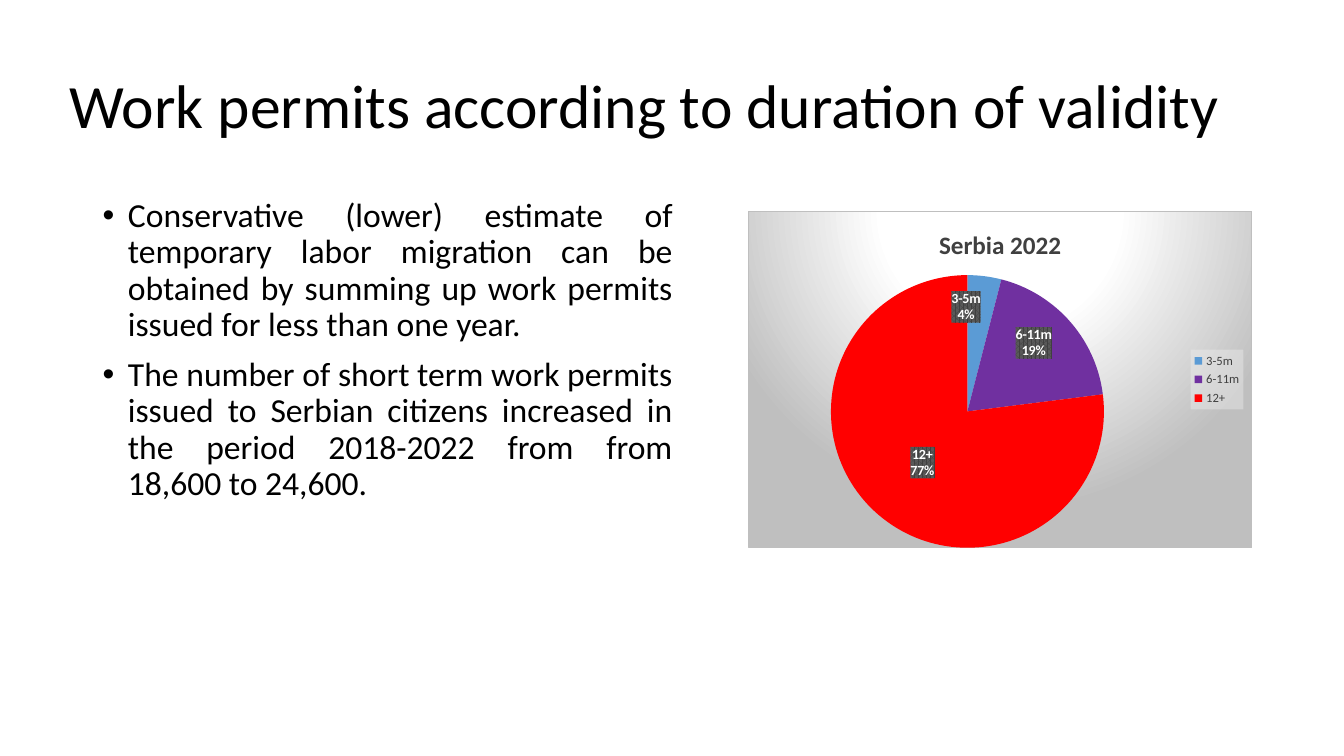
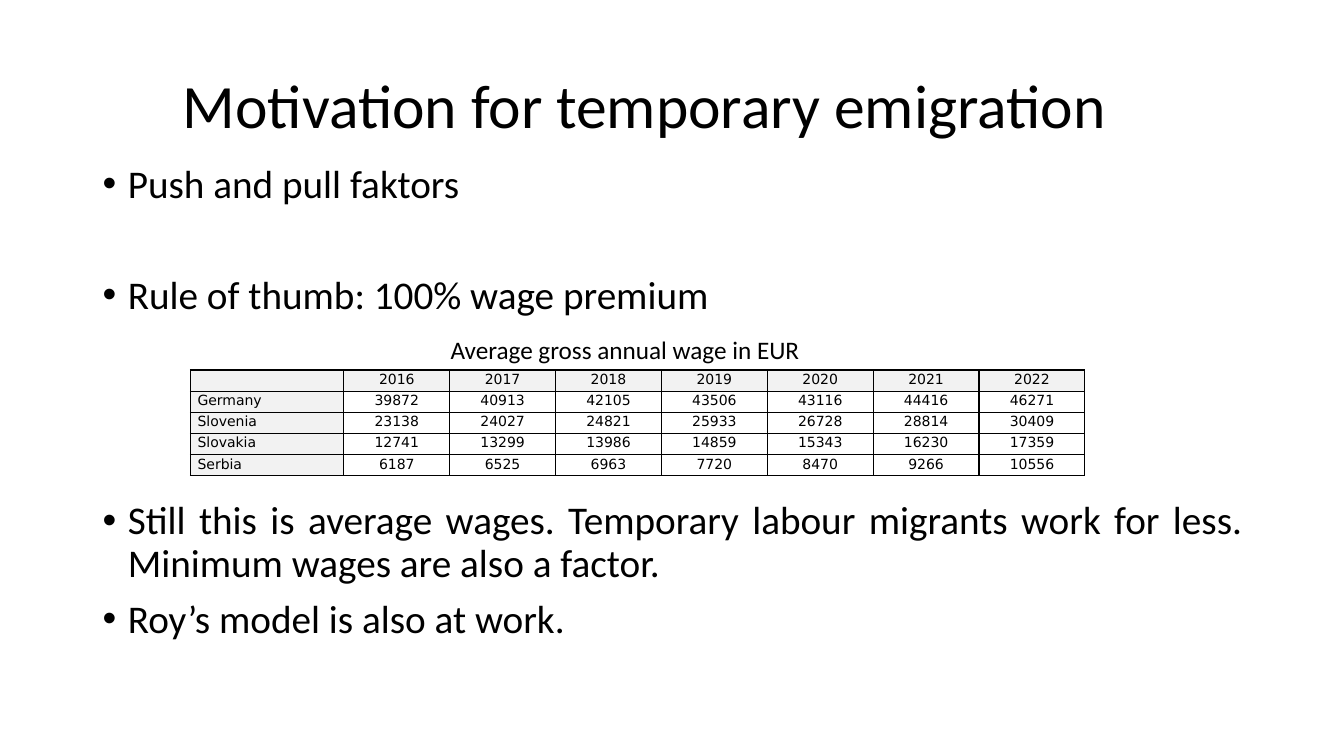
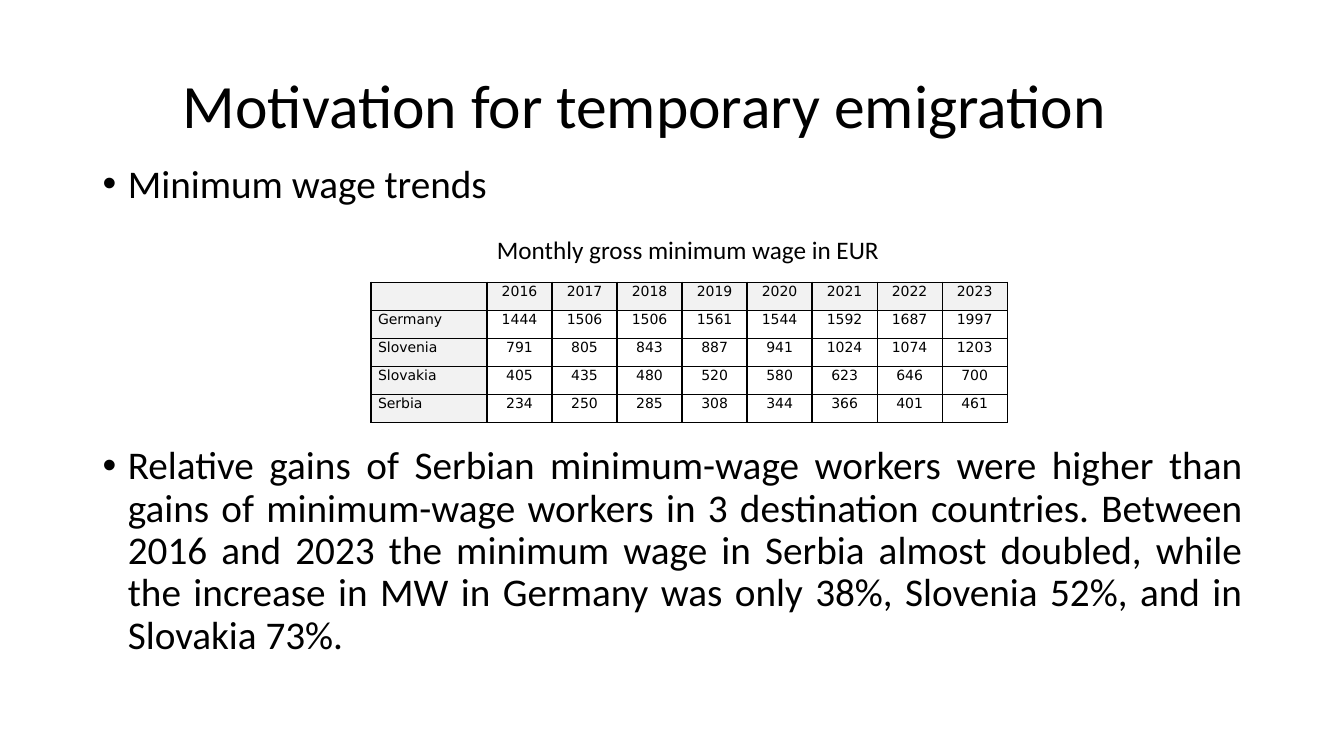
from copy import deepcopy
from dataclasses import dataclass
from lxml.etree import SubElement
from pptx import Presentation
from pptx.chart.data import CategoryChartData
from pptx.dml.color import RGBColor
from pptx.enum.chart import XL_CHART_TYPE, XL_LABEL_POSITION, XL_LEGEND_POSITION
from pptx.enum.text import MSO_ANCHOR, MSO_AUTO_SIZE, PP_ALIGN
from pptx.oxml import parse_xml
from pptx.oxml.ns import nsdecls, qn
from pptx.util import Inches, Pt


@dataclass(frozen=True)
class Theme:
    font: str = "Calibri"
    cell_font: str = "DejaVu Sans"
    ink: str = "000000"
    gray: str = "404040"
    mid: str = "595959"
    edge: str = "BFBFBF"
    pale: str = "F2F2F2"
    white: str = "FFFFFF"
    slices: tuple = ("5B9BD5", "7030A0", "FF0000")
    title: int = 44
    body: int = 28
    small: int = 24
    note: int = 18
    cell: int = 10
    key: int = 9


theme = Theme()


def put(item, color=None, **values):
    for name, value in values.items():
        setattr(item, name, value)
    if color:
        item.color.rgb = RGBColor.from_string(color)


def write(para, text, size, face=theme.font, **format):
    put(para, **format)
    if text:
        run = para.add_run()
        run.text = text
        put(run.font, theme.ink, name=face, size=Pt(size))
    else:
        SubElement(para._p, qn("a:endParaRPr"), sz=str(size * 100))


deck = Presentation()
put(deck, slide_width=Inches(13.33), slide_height=Inches(7.5))

pages = [
    ("Work permits according to duration of validity", (0.92, 1.92, 5.85, 5.5), theme.small, [
        (10, "Conservative (lower) estimate of temporary labor migration can be obtained by summing up work permits issued for less than one year."),
        (10, "The number of short term work permits issued to Serbian citizens increased in the period 2018-2022 from from 18,600 to 24,600."),
    ]),
    ("Motivation for temporary emigration", (0.92, 1.58, 11.5, 4.9), theme.body, [
        (10, "Push and pull faktors"),
        (49, "Rule of thumb: 100% wage premium"),
        (131, "Still this is average wages. Temporary labour migrants work for less. Minimum wages are also a factor."),
        (10, "Roy’s model is also at work."),
    ]),
    ("Motivation for temporary emigration", (0.92, 1.58, 11.5, 5.2), theme.body, [
        (10, "Minimum wage trends"),
        (171, "Relative gains of Serbian minimum-wage workers were higher than gains of minimum-wage workers in 3 destination countries. Between 2016 and 2023 the minimum wage in Serbia almost doubled, while the increase in MW in Germany was only 38%, Slovenia 52%, and in Slovakia 73%."),
    ]),
]

slides = []
for title, box, size, points in pages:
    slide = deck.slides.add_slide(deck.slide_layouts[5])
    slides.append(slide)
    head = slide.shapes.title
    put(head, left=Inches(0.37), top=Inches(0.35), width=Inches(12.05), height=Inches(1.45))
    put(head.text_frame, vertical_anchor=MSO_ANCHOR.MIDDLE, auto_size=MSO_AUTO_SIZE.NONE, word_wrap=True)
    write(head.text_frame.paragraphs[0], title, theme.title, alignment=PP_ALIGN.CENTER, line_spacing=0.9)

    frame = slide.shapes.add_textbox(*map(Inches, box)).text_frame
    frame.word_wrap = True
    for place, (gap, text) in enumerate(points):
        para = frame.add_paragraph() if place else frame.paragraphs[0]
        write(para, text, size, alignment=PP_ALIGN.JUSTIFY, line_spacing=0.9, space_before=Pt(gap))
        props = para._p.get_or_add_pPr()
        props.set("marL", str(Inches(0.25)))
        props.set("indent", str(Inches(-0.25)))
        SubElement(props, qn("a:buFont"), typeface="Arial")
        SubElement(props, qn("a:buChar"), char="•")

data = CategoryChartData()
data.categories = ["3-5m", "6-11m", "12+"]
data.add_series("Series 1", (4, 19, 77))
chart = slides[0].shapes.add_chart(
    XL_CHART_TYPE.PIE, Inches(7.42), Inches(2.09), Inches(5), Inches(3.35), data).chart
put(chart.font, theme.ink, name=theme.font, size=Pt(theme.cell))
put(chart, has_title=True, has_legend=True)
para = chart.chart_title.text_frame.paragraphs[0]
write(para, "Serbia 2022", theme.note)
put(para.runs[0].font, theme.gray, bold=True)
put(chart.legend, position=XL_LEGEND_POSITION.RIGHT, include_in_layout=False)
put(chart.legend.font, theme.gray, name=theme.font, size=Pt(theme.key))

plot = chart.plots[0]
plot.vary_by_categories = True
series = plot.series[0]
for place, color in enumerate(theme.slices):
    fill = series.points[place].format.fill
    fill.solid()
    fill.fore_color.rgb = RGBColor.from_string(color)
labels = series.data_labels
put(labels, show_value=False, show_percentage=True, show_category_name=True,
    position=XL_LABEL_POSITION.CENTER)
put(labels.font, theme.white, name=theme.font, size=Pt(theme.cell), bold=True)

root = chart.element
group = root.find(".//" + qn("c:dLbls"))
legend = root.find(".//" + qn("c:legend"))
area = root.find(".//" + qn("c:plotArea"))
fills = [
    (root, f'''<a:gradFill><a:gsLst>
        <a:gs pos="0"><a:srgbClr val="{theme.white}"/></a:gs>
        <a:gs pos="39000"><a:srgbClr val="{theme.white}"/></a:gs>
        <a:gs pos="100000"><a:srgbClr val="{theme.edge}"/></a:gs></a:gsLst>
        <a:path path="circle"><a:fillToRect l="50000" t="-80000" r="50000" b="180000"/></a:path>
        </a:gradFill><a:ln w="9525"><a:solidFill><a:srgbClr val="{theme.edge}"/></a:solidFill></a:ln>'''),
    (legend, f'''<a:solidFill><a:srgbClr val="{theme.pale}"><a:alpha val="39000"/></a:srgbClr></a:solidFill>'''),
    (group, f'''<a:pattFill prst="pct75"><a:fgClr><a:srgbClr val="{theme.gray}"/></a:fgClr>
        <a:bgClr><a:srgbClr val="{theme.mid}"/></a:bgClr></a:pattFill>'''),
]
for part, fill in fills:
    part.find(qn("c:txPr")).addprevious(parse_xml(f'<c:spPr {nsdecls("c", "a")}>{fill}</c:spPr>'))

split = parse_xml(f'<c:separator {nsdecls("c")}>\n</c:separator>')
group.find(qn("c:showBubbleSize")).addnext(split)
shared = [deepcopy(part) for part in group if part.tag != qn("c:showLeaderLines")]
for place, (x, y) in enumerate([(-0.02, -0.11), (0.03, -0.07)]):
    label = parse_xml(f'''<c:dLbl {nsdecls("c")}><c:idx val="{place}"/><c:layout><c:manualLayout>
        <c:x val="{x}"/><c:y val="{y}"/></c:manualLayout></c:layout></c:dLbl>''')
    label.extend(deepcopy(shared))
    group.insert(place, label)

for old in area.findall(qn("c:layout")):
    area.remove(old)
area.insert(0, parse_xml(f'''<c:layout {nsdecls("c")}><c:manualLayout>
    <c:layoutTarget val="inner"/><c:xMode val="edge"/><c:yMode val="edge"/>
    <c:x val="0"/><c:y val="0.19"/><c:w val="0.87"/><c:h val="0.81"/></c:manualLayout></c:layout>'''))

tables = [
    (slides[1], "Average gross annual wage in EUR", (4.37, 3.27, 3.7, 0.4), (1.89, 3.67, 8.87, 1.05), 1.52, [
        ("Germany", 39872, 40913, 42105, 43506, 43116, 44416, 46271),
        ("Slovenia", 23138, 24027, 24821, 25933, 26728, 28814, 30409),
        ("Slovakia", 12741, 13299, 13986, 14859, 15343, 16230, 17359),
        ("Serbia", 6187, 6525, 6963, 7720, 8470, 9266, 10556),
    ]),
    (slides[2], "Monthly gross minimum wage in EUR", (4.83, 2.28, 4.03, 0.4), (3.68, 2.8, 6.31, 1.39), 1.15, [
        ("Germany", 1444, 1506, 1506, 1561, 1544, 1592, 1687, 1997),
        ("Slovenia", 791, 805, 843, 887, 941, 1024, 1074, 1203),
        ("Slovakia", 405, 435, 480, 520, 580, 623, 646, 700),
        ("Serbia", 234, 250, 285, 308, 344, 366, 401, 461),
    ]),
]

for slide, note, spot, box, first, wages in tables:
    frame = slide.shapes.add_textbox(*map(Inches, spot)).text_frame
    put(frame, word_wrap=False, auto_size=MSO_AUTO_SIZE.SHAPE_TO_FIT_TEXT)
    write(frame.paragraphs[0], note, theme.note)

    years = len(wages[0]) - 1
    rows = [("", *range(2016, 2016 + years)), *wages]
    table = slide.shapes.add_table(len(rows), years + 1, *map(Inches, box)).table
    put(table, first_row=False, horz_banding=False)
    for place, column in enumerate(table.columns):
        column.width = Inches((box[2] - first) / years if place else first)
    for down, row in enumerate(rows):
        for across, value in enumerate(row):
            cell = table.cell(down, across)
            put(cell, margin_left=Inches(0.07), margin_right=Inches(0.07), margin_top=0, margin_bottom=0)
            write(cell.text_frame.paragraphs[0], str(value), theme.cell, theme.cell_font,
                  alignment=PP_ALIGN.CENTER if across else PP_ALIGN.LEFT,
                  line_spacing=1.1, space_after=Pt(6))
            props = cell._tc.get_or_add_tcPr()
            for side in "LRTB":
                line = SubElement(props, qn("a:ln" + side), w=str(Pt(1)))
                SubElement(SubElement(line, qn("a:solidFill")), qn("a:srgbClr"), val=theme.ink)
            if down and across:
                cell.fill.background()
            else:
                cell.fill.solid()
                cell.fill.fore_color.rgb = RGBColor.from_string(theme.pale)

deck.save("out.pptx")
